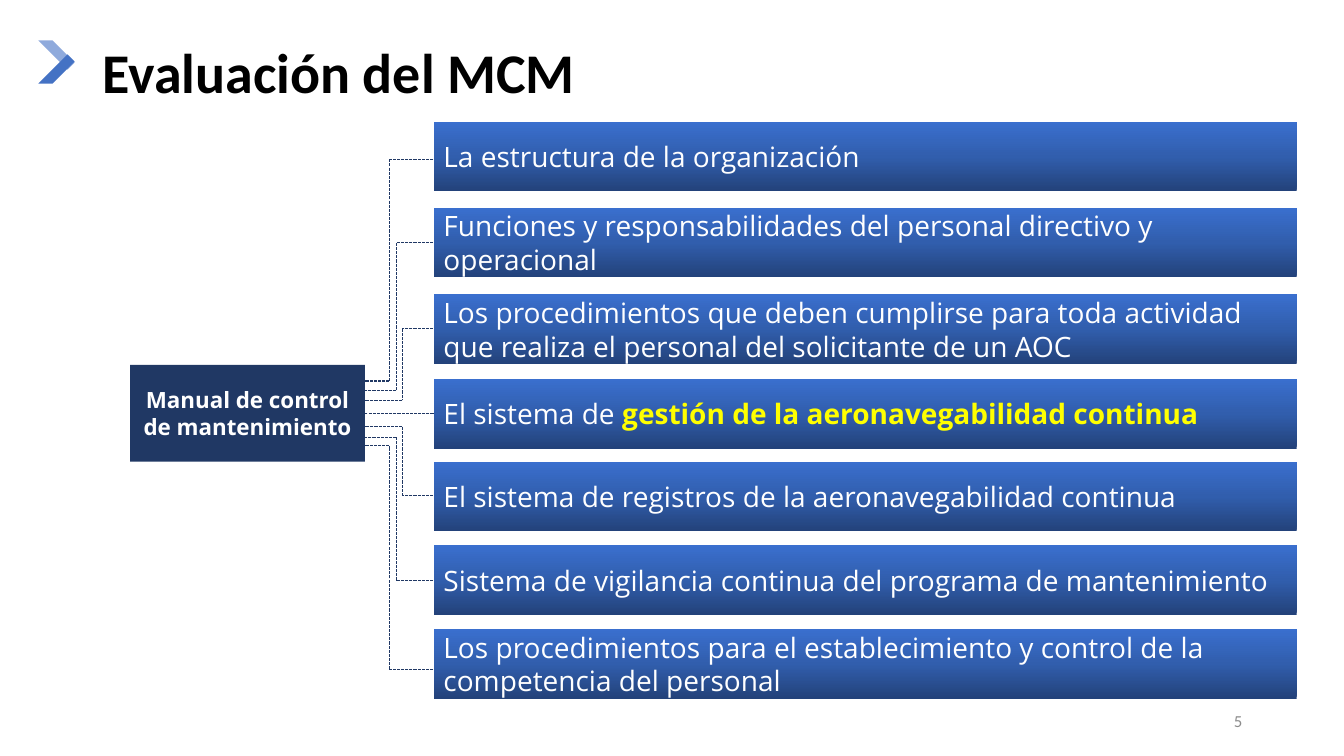
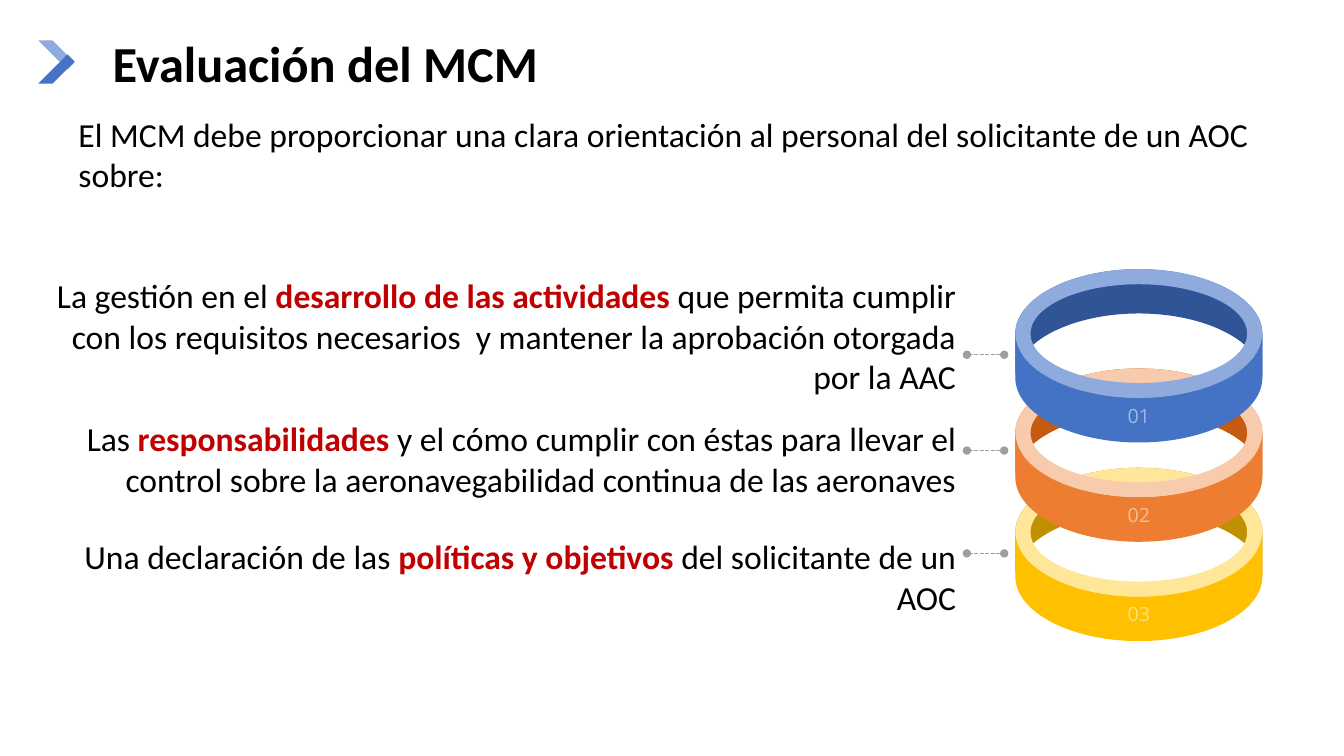
"""Build two slides on the evaluation of a maintenance control manual."""
import itertools
from dataclasses import dataclass
from typing import Any, NamedTuple, Optional

import lxml.etree
import pptx
import pptx.dml.color
import pptx.enum.dml
import pptx.enum.shapes
import pptx.enum.text
import pptx.oxml.ns
import pptx.util

CELL = pptx.util.Inches(0.1)
COLUMNS, ROWS = 133.3, 75
COLORS = {
    "ink": "000000", "white": "FFFFFF", "navy": "203864", "yellow": "FFFF00",
    "red": "C00000", "page": "8C8C8C", "leader": "9E9E9E",
    "bar_low": "23427A", "bar_mid": "315EAD", "bar_high": "3A6FCE",
    "blue": "4472C4", "blue_light": "8FAADC", "blue_dark": "2F5597",
    "orange": "ED7D31", "orange_light": "F8CBAD", "orange_dark": "C55A11",
    "gold": "FFC000", "gold_light": "FFE699", "gold_dark": "BF9000",
}
FORMATS = {
    "title": {"name": "Calibri", "size": pptx.util.Pt(40), "bold": True},
    "title_small": {"name": "Calibri", "size": pptx.util.Pt(36), "bold": True},
    "body": {"name": "Calibri", "size": pptx.util.Pt(24), "bold": False},
    "page": {"name": "Calibri", "size": pptx.util.Pt(12), "bold": False},
    "manual": {"name": "Open Sans", "size": pptx.util.Pt(16), "bold": True},
    "bar": {"name": "Open Sans", "size": pptx.util.Pt(20), "bold": False},
    "ring": {"name": "Open Sans", "size": pptx.util.Pt(14), "bold": False},
}
ALIGN = pptx.enum.text.PP_ALIGN
ANCHOR = pptx.enum.text.MSO_ANCHOR
SHAPE = pptx.enum.shapes.MSO_SHAPE
TITLE = "Evaluación del MCM"


class Area(NamedTuple):
    """Left, top, width and height in grid cells."""
    left: float
    top: float
    width: float
    height: float


class Span(NamedTuple):
    """A piece of text, stressed or not."""
    text: str
    stressed: bool = False


Point = tuple[float, float]
Step = tuple[str, list[Point]]


@dataclass(frozen=True)
class Topic:
    """A bar with the row of its branch, its lane and its exit row."""
    top: float
    branch: float
    lane: float
    leave: float
    spans: tuple[Span, ...]


@dataclass(frozen=True)
class Guidance:
    """A right-aligned statement and the row of its leader."""
    area: Area
    leader: float
    spans: tuple[Span, ...]


@dataclass(frozen=True)
class TextStyle:
    """How the text of a box is set."""
    font: str
    color: str = "ink"
    stress: str = "red"
    align: Any = ALIGN.LEFT
    anchor: Any = ANCHOR.TOP
    spacing: Optional[float] = None


TOPICS = (
    Topic(12.1, 15.8, 38.6, 37.8, (Span("La estructura de la organización"),)),
    Topic(20.6, 24.1, 39.3, 38.7, (Span(
        "Funciones y responsabilidades del personal directivo y operacional"),)),
    Topic(29.2, 32.6, 39.9, 39.7, (Span(
        "Los procedimientos que deben cumplirse para toda actividad "
        "que realiza el personal del solicitante de un AOC"),)),
    Topic(37.6, 41, 43, 41, (
        Span("El sistema de "), Span("gestión de la aeronavegabilidad continua", True))),
    Topic(45.8, 49.2, 39.9, 42.3, (Span(
        "El sistema de registros de la aeronavegabilidad continua"),)),
    Topic(54.1, 57.6, 39.3, 43.4, (Span(
        "Sistema de vigilancia continua del programa de mantenimiento"),)),
    Topic(62.4, 66.4, 38.6, 44.2, (Span(
        "Los procedimientos para el establecimiento y control de la "
        "competencia del personal"),)),
)
GUIDANCE = (
    Guidance(Area(4.5, 26.8, 91.3, 12.1), 35.2, (
        Span("La gestión en el "), Span("desarrollo de las actividades ", True),
        Span("que permita cumplir con los requisitos necesarios  y mantener "
             "la aprobación otorgada por la AAC"))),
    Guidance(Area(2.4, 41, 93.4, 9.6), 44.7, (
        Span("Las "), Span("responsabilidades", True),
        Span(" y el cómo cumplir con éstas para llevar el control sobre "
             "la aeronavegabilidad continua de las aeronaves"))),
    Guidance(Area(4.5, 52.7, 91.3, 7.5), 54.9, (
        Span("Una declaración de las "), Span("políticas y objetivos ", True),
        Span("del solicitante de un AOC"))),
)
RING_HUES = ("blue", "orange", "gold")
RING = Area(100.7, 26.7, 24.5, 12.8)
RING_STEP, RING_DEPTH, RING_RIM = 9.85, 4.4, 1.5
CURVE = 0.55


def cells(*counts: float) -> list[pptx.util.Emu]:
    """Turn grid cells into lengths."""
    return [pptx.util.Emu(round(count * CELL)) for count in counts]


def rgb(key: str) -> pptx.dml.color.RGBColor:
    """Look up a colour."""
    return pptx.dml.color.RGBColor.from_string(COLORS[key])


def add_xml(parent: Any, tag: str, **attributes: str) -> Any:
    """Append a drawing element."""
    return lxml.etree.SubElement(parent, pptx.oxml.ns.qn(tag), attributes)


def write(box: Any, spans: tuple[Span, ...], style: TextStyle) -> None:
    """Fill a box with one paragraph of spans."""
    frame = box.text_frame
    frame.word_wrap = True
    frame.vertical_anchor = style.anchor
    paragraph = frame.paragraphs[0]
    paragraph.alignment = style.align
    paragraph.line_spacing = style.spacing
    for span in spans:
        run = paragraph.add_run()
        run.text = span.text
        for attribute, value in FORMATS[style.font].items():
            setattr(run.font, attribute, value)
        run.font.bold = run.font.bold or span.stressed
        run.font.color.rgb = rgb(style.stress if span.stressed else style.color)


def add_text(slide: Any, area: Area, spans: tuple[Span, ...], style: TextStyle) -> None:
    """Add a text box."""
    write(slide.shapes.add_textbox(*cells(*area)), spans, style)


def paint(shape: Any, color: str) -> Any:
    """Give a shape a plain fill without line or shadow."""
    shape.shadow.inherit = False
    shape.line.fill.background()
    shape.fill.solid()
    shape.fill.fore_color.rgb = rgb(color)
    return shape


def add_outline(slide: Any, points: list[Point], color: str) -> Any:
    """Add a closed outline through points."""
    corners = [tuple(cells(*point)) for point in points]
    builder = slide.shapes.build_freeform(*corners[0], scale=1.0)
    builder.add_line_segments(corners[1:], close=True)
    return paint(builder.convert_to_shape(), color)


def add_curves(slide: Any, area: Area, steps: list[Step], color: str) -> Any:
    """Add an outline of curves, given from the corner of its area."""
    left, top, width, height = area
    shape = add_outline(slide, [(left, top), (left + width, top),
                                (left + width, top + height), (left, top + height)], color)
    outline = next(shape.element.iter(pptx.oxml.ns.qn("a:path")))
    for child in list(outline):
        outline.remove(child)
    for tag, points in steps:
        step = add_xml(outline, tag)
        for point in points:
            x, y = cells(*point)
            add_xml(step, "a:pt", x=str(int(x)), y=str(int(y)))
    return shape


def arcs(center: Point, radii: Point, directions: list[Point]) -> list[Step]:
    """Join compass directions of an ellipse by quarter arcs."""
    def place(x: float, y: float) -> Point:
        return center[0] + x * radii[0], center[1] + y * radii[1]

    return [("a:cubicBezTo", [place(a + CURVE * c, b + CURVE * d),
                              place(c + CURVE * a, d + CURVE * b), place(c, d)])
            for (a, b), (c, d) in itertools.pairwise(directions)]


def add_line(slide: Any, start: Point, end: Point, color: str, width: float,
             dotted_ends: bool = False) -> None:
    """Add a dashed line."""
    line = slide.shapes.add_connector(
        pptx.enum.shapes.MSO_CONNECTOR.STRAIGHT, *cells(*start, *end))
    line.line.color.rgb = rgb(color)
    line.line.width = pptx.util.Pt(width)
    line.line.dash_style = pptx.enum.dml.MSO_LINE.SQUARE_DOT
    if dotted_ends:
        for tag in ("a:headEnd", "a:tailEnd"):
            add_xml(line.line._get_or_add_ln(), tag, type="oval")
    add_xml(line.element.spPr, "a:effectLst")


def start_slide(deck: Any, title_area: Area, style: TextStyle) -> Any:
    """Add a blank slide with the chevron and the title."""
    slide = deck.slides.add_slide(deck.slide_layouts[6])
    upper = [(3.8, 4), (6.7, 6.9), (7.4, 6.2), (5.2, 4)]
    add_outline(slide, upper, "blue_light")
    add_outline(slide, [(x, 12.3 - y) for x, y in upper], "blue")
    add_text(slide, title_area, (Span(TITLE),), style)
    return slide


def add_bar(slide: Any, topic: Topic) -> None:
    """Add the gradient bar of a topic."""
    bar = paint(slide.shapes.add_shape(
        SHAPE.RECTANGLE, *cells(43, topic.top, 85.6, 6.9)), "bar_mid")
    bar.fill.gradient()
    bar.fill.gradient_angle = 90
    stops = next(bar.element.iter(pptx.oxml.ns.qn("a:gsLst")))
    stops.clear()
    for share, color in ((0, "bar_low"), (50, "bar_mid"), (100, "bar_high")):
        stop = add_xml(stops, "a:gs", pos=str(share * 1000))
        add_xml(stop, "a:srgbClr", val=COLORS[color])
    write(bar, topic.spans, TextStyle("bar", "white", "yellow", anchor=ANCHOR.MIDDLE))


def add_branch(slide: Any, topic: Topic) -> None:
    """Link the manual to a topic, through a lane unless they are level."""
    route = [(topic.lane, topic.branch), (36.2, topic.leave)]
    if topic.branch != topic.leave:
        route = [(49.5, topic.branch), route[0], (topic.lane, topic.leave), route[1]]
    for start, end in itertools.pairwise(route):
        add_line(slide, start, end, "navy", 0.75)


def add_wall(slide: Any, top: float, side: int, color: str) -> Any:
    """Add the wall of a ring: side -1 is the back, 1 the front."""
    across, down = RING.width / 2, RING.height / 2
    base = down if side < 0 else 0
    route = [(1, 0), (0, side), (-1, 0)]
    steps = [("a:moveTo", [(RING.width, base)]),
             *arcs((across, base), (across, down), route),
             ("a:lnTo", [(0, base + RING_DEPTH)]),
             *arcs((across, base + RING_DEPTH), (across, down), route[::-1]),
             ("a:close", [])]
    area = Area(RING.left, top + down - base, RING.width, down + RING_DEPTH)
    return add_curves(slide, area, steps, color)


def add_ring(slide: Any, index: int, hue: str) -> None:
    """Add a numbered ring of the stack."""
    area = RING._replace(top=RING.top + index * RING_STEP)
    add_wall(slide, area.top, -1, f"{hue}_dark")
    across, down = area.width / 2, area.height / 2
    rim = []
    for inset, turn in ((RING_RIM, 1), (0, -1)):
        route = [(0, -1), (turn, 0), (0, 1), (-turn, 0), (0, -1)]
        rim += [("a:moveTo", [(across, inset)]),
                *arcs((across, down), (across - inset, down - inset), route),
                ("a:close", [])]
    add_curves(slide, area, rim, f"{hue}_light")
    front = add_wall(slide, area.top, 1, hue)
    frame = front.text_frame
    for margin, size in {"margin_left": 0, "margin_right": 0,
                         "margin_top": 5.4, "margin_bottom": 0}.items():
        setattr(frame, margin, cells(size)[0])
    write(front, (Span(f"{index + 1:02}"),),
          TextStyle("ring", "white", align=ALIGN.CENTER, anchor=ANCHOR.MIDDLE))
    ink = next(frame._txBody.iter(pptx.oxml.ns.qn("a:srgbClr")))
    add_xml(ink, "a:alpha", val="50000")


def build_topics(deck: Any) -> None:
    """Build the slide on what the manual covers."""
    slide = start_slide(deck, Area(9.2, 4, 115, 7.9), TextStyle("title", spacing=0.9))
    add_text(slide, Area(94.2, 69.5, 30, 4), (Span("5"),),
             TextStyle("page", "page", align=ALIGN.RIGHT, anchor=ANCHOR.MIDDLE))
    manual = paint(slide.shapes.add_shape(
        SHAPE.RECTANGLE, *cells(12.9, 36.2, 23.3, 9.6)), "navy")
    write(manual, (Span("Manual de control de mantenimiento"),),
          TextStyle("manual", "white", align=ALIGN.CENTER, anchor=ANCHOR.MIDDLE))
    for draw, topic in itertools.product((add_branch, add_bar), TOPICS):
        draw(slide, topic)


def build_guidance(deck: Any) -> None:
    """Build the slide on the guidance the manual gives."""
    slide = start_slide(deck, Area(10.2, 2.1, 115, 8.9),
                        TextStyle("title_small", anchor=ANCHOR.MIDDLE, spacing=0.9))
    add_text(slide, Area(6.8, 10.8, 119.4, 7.2), (Span(
        "El MCM debe proporcionar una clara orientación al personal "
        "del solicitante de un AOC sobre:"),), TextStyle("body"))
    for index, hue in reversed(list(enumerate(RING_HUES))):
        add_ring(slide, index, hue)
    for item in GUIDANCE:
        add_text(slide, item.area, item.spans, TextStyle("body", align=ALIGN.RIGHT))
        add_line(slide, (99.6, item.leader), (95.9, item.leader), "leader", 1, True)


def main() -> None:
    """Build and save the deck."""
    deck = pptx.Presentation()
    deck.slide_width, deck.slide_height = cells(COLUMNS, ROWS)
    build_topics(deck)
    build_guidance(deck)
    deck.save("out.pptx")


if __name__ == "__main__":
    main()
